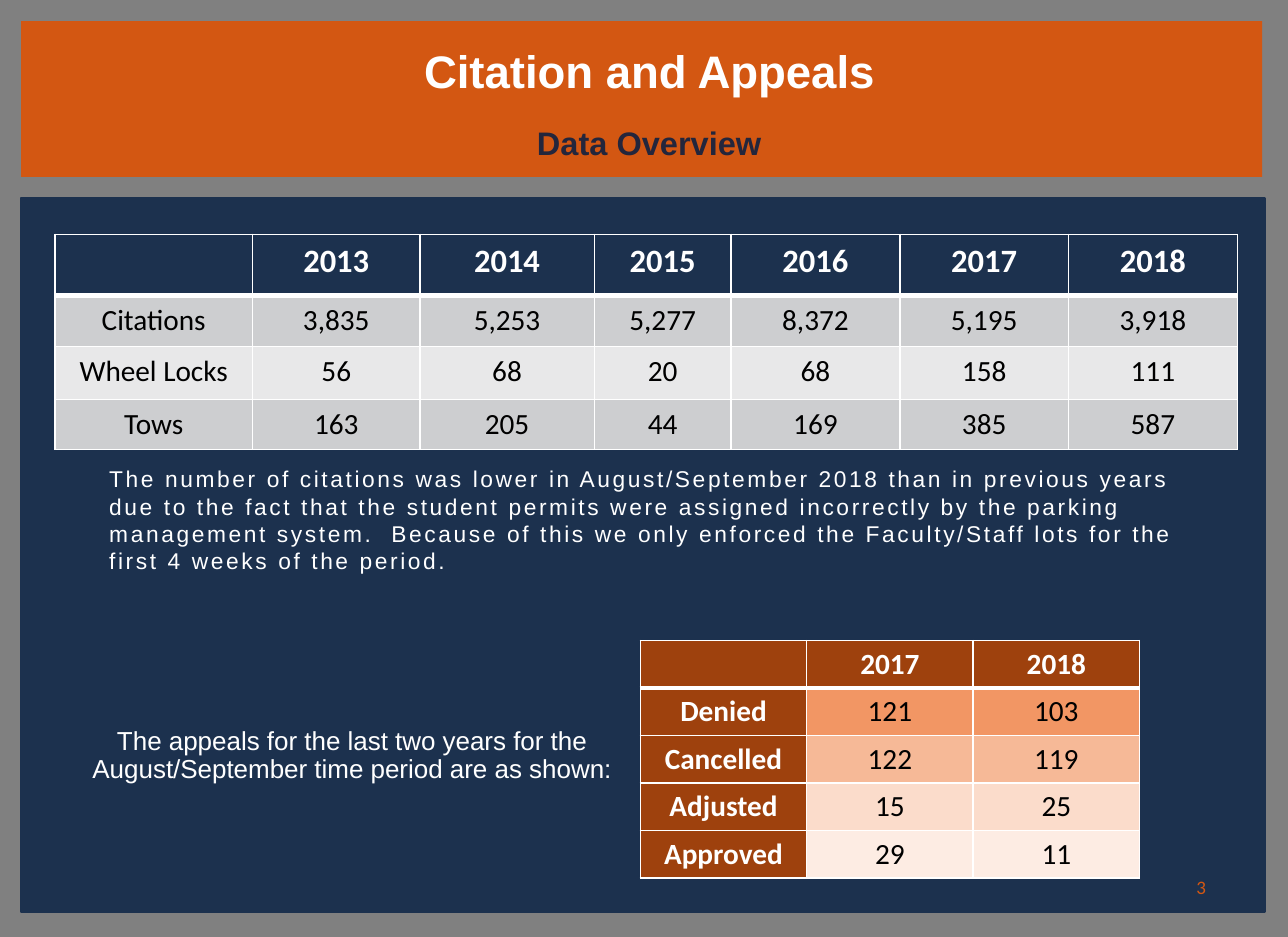
from dataclasses import dataclass
from typing import NamedTuple

from lxml.etree import SubElement
from pptx import Presentation
from pptx.dml.color import RGBColor
from pptx.enum.shapes import MSO_SHAPE
from pptx.enum.text import MSO_ANCHOR, PP_ALIGN
from pptx.oxml.ns import qn
from pptx.util import Cm, Pt


@dataclass(frozen=True)
class Theme:
    backdrop: str = "808080"
    navy: str = "1C314E"
    orange: str = "D35712"
    rust: str = "9E410D"
    ink: str = "24263C"
    white: str = "FFFFFF"
    black: str = "000000"
    gray_bands: tuple = ("CDCED0", "E8E8E9", "CDCED0")
    orange_bands: tuple = ("F29664", "F6B997", "FBDCCB", "FDECE3")
    text_font: str = "Arial"
    table_font: str = "Calibri"
    title: float = 28
    heading: float = 20
    cell: float = 18
    appeals: float = 16
    note: float = 14
    number: float = 11.7


THEME = Theme()


class Box(NamedTuple):
    left: float
    top: float
    width: float
    height: float

    def inner(self, left, top, width, height):
        return Box(self.left + left, self.top + top, width, height)

    def lengths(self):
        return [Cm(value) for value in self]


def add_text(para, text, size, color=THEME.white, font=THEME.text_font, bold=False,
             align=PP_ALIGN.CENTER, tracking=0):
    para.alignment = align
    span = para.add_run()
    span.text = text
    span.font.size = Pt(size)
    span.font.name = font
    span.font.bold = bold
    span.font.color.rgb = RGBColor.from_string(color)
    if tracking:
        span.font._element.set("spc", str(int(tracking * 100)))


def add_frame(page, box, anchor=MSO_ANCHOR.TOP):
    frame = page.shapes.add_textbox(*box.lengths()).text_frame
    frame.word_wrap = True
    frame.vertical_anchor = anchor
    return frame


def add_block(page, box, color):
    block = page.shapes.add_shape(MSO_SHAPE.RECTANGLE, *box.lengths())
    block.shadow.inherit = False
    block.fill.solid()
    block.fill.fore_color.rgb = RGBColor.from_string(color)
    block.line.fill.background()
    return block


def set_borders(cell, top=1, bottom=1):
    properties = cell._tc.get_or_add_tcPr()
    for side, width in (("L", 1), ("R", 1), ("T", top), ("B", bottom)):
        line = SubElement(properties, qn(f"a:ln{side}"), w=str(Pt(width)))
        fill = SubElement(line, qn("a:solidFill"))
        SubElement(fill, qn("a:srgbClr"), val=THEME.white)


def add_grid(page, box, rows, widths, heights, header_color, header_size, bands,
             label_color=None, margins=(0.25, 0.13)):
    grid = page.shapes.add_table(len(rows), len(widths), *box.lengths()).table
    for column, width in zip(grid.columns, widths):
        column.width = Cm(width)
    for row, height in zip(grid.rows, heights):
        row.height = Cm(height)
    for r, values in enumerate(rows):
        for c, value in enumerate(values):
            cell = grid.cell(r, c)
            cell.margin_left = cell.margin_right = Cm(margins[0])
            cell.margin_top = cell.margin_bottom = Cm(margins[1])
            set_borders(cell, top=3 if r == 1 else 1, bottom=3 if r == 0 else 1)
            is_label = c == 0 and label_color is not None
            strong = r == 0 or is_label
            fill = header_color if r == 0 else label_color if is_label else bands[r - 1]
            cell.fill.solid()
            cell.fill.fore_color.rgb = RGBColor.from_string(fill)
            if value:
                add_text(cell.text_frame.paragraphs[0], value,
                         header_size if r == 0 else THEME.cell,
                         color=THEME.white if strong else THEME.black,
                         font=THEME.table_font, bold=strong)


def add_title_band(page, box):
    add_block(page, box, THEME.orange)
    frame = add_frame(page, box.inner(8.28, 0.35, 10.69, 3))
    add_text(frame.paragraphs[0], "Citation and Appeals", THEME.title, bold=True)
    subtitle = frame.add_paragraph()
    subtitle.space_before = Pt(15.6)
    add_text(subtitle, "Data Overview", THEME.heading, color=THEME.ink, bold=True)


def add_citations(page, box):
    rows = [
        ("", "2013", "2014", "2015", "2016", "2017", "2018"),
        ("Citations", "3,835", "5,253", "5,277", "8,372", "5,195", "3,918"),
        ("Wheel Locks", "56", "68", "20", "68", "158", "111"),
        ("Tows", "163", "205", "44", "169", "385", "587"),
    ]
    add_grid(page, box.inner(0, 0, 25.65, 4.67), rows,
             widths=(4.29, 3.63, 3.78, 2.97, 3.66, 3.66, 3.66),
             heights=(1.33, 1.1, 1.16, 1.08), header_color=THEME.navy,
             header_size=THEME.heading, bands=THEME.gray_bands, margins=(0.3, 0.15))
    frame = add_frame(page, box.inner(0.11, 4.88, 25.4, 4.5))
    frame.margin_left = Cm(1.07)
    add_text(frame.paragraphs[0],
             "The number of citations was lower in August/September 2018 than in previous "
             "years due to the fact that the student permits were assigned incorrectly by "
             "the parking management system.  Because of this we only enforced the "
             "Faculty/Staff lots for the first 4 weeks of the period.",
             THEME.note, align=PP_ALIGN.LEFT, tracking=1.6)


def add_appeals(page, box):
    rows = [
        ("", "2017", "2018"),
        ("Denied", "121", "103"),
        ("Cancelled", "122", "119"),
        ("Adjusted", "15", "25"),
        ("Approved", "29", "11"),
    ]
    add_grid(page, box.inner(12.37, 0, 10.83, 5.15), rows,
             widths=[3.61] * 3, heights=[1.03] * 5, header_color=THEME.rust,
             header_size=THEME.cell, bands=THEME.orange_bands, label_color=THEME.rust)
    para = add_frame(page, box.inner(0, 1.78, 12.24, 2.84)).paragraphs[0]
    para.line_spacing = 0.9
    add_text(para, "The appeals for the last two years for the August/September time "
                   "period are as shown:", THEME.appeals)


def add_data_panel(page, box):
    panel = add_block(page, box, THEME.navy)
    panel.line.color.rgb = RGBColor.from_string(THEME.navy)
    panel.line.width = Pt(1.5)
    add_citations(page, box.inner(0.73, 0.79, 25.65, 9.4))
    add_appeals(page, box.inner(1.06, 9.6, 23.2, 5.15))
    frame = add_frame(page, box.inner(24.71, 14.53, 1.78, 0.81), MSO_ANCHOR.MIDDLE)
    add_text(frame.paragraphs[0], "3", THEME.number, color=THEME.orange,
             font=THEME.table_font)


def main():
    deck = Presentation()
    deck.slide_width, deck.slide_height = Cm(27.94), Cm(20.32)
    page = deck.slides.add_slide(deck.slide_layouts[6])
    page.background.fill.solid()
    page.background.fill.fore_color.rgb = RGBColor.from_string(THEME.backdrop)
    add_data_panel(page, Box(0.46, 4.29, 26.97, 15.49))
    add_title_band(page, Box(0.46, 0.46, 26.92, 3.38))
    deck.save("out.pptx")


if __name__ == "__main__":
    main()
